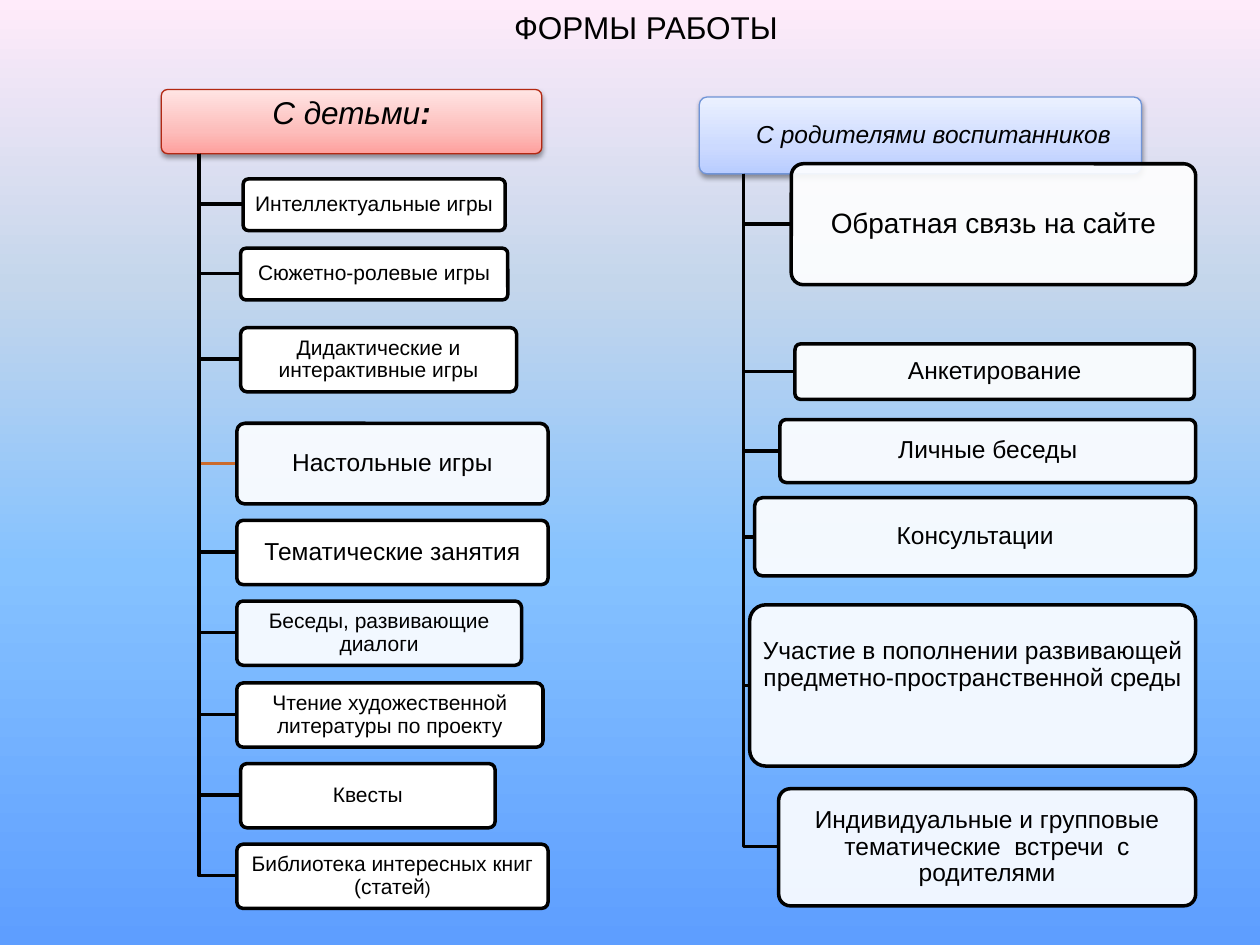
from dataclasses import dataclass, field
from typing import Any

from lxml import etree
from pptx import Presentation
from pptx import util as u
from pptx.dml.color import RGBColor
from pptx.enum import shapes, text
from pptx.oxml.ns import qn

PX = 9144
HUES = {
    "ink": "000000", "paper": "FFFFFF", "accent": "CB6B2C",
    "red": "B32812", "blue": "7094D7",
}
SKY = {0: "5E9EFF", 40: "85C2FF", 70: "C4D6EB", 100: "FFEBFA"}
ROSE = {0: "FEA09D", 35: "FDBDBB", 100: "FFE5E4"}
ICE = {0: "B8CCFF", 35: "CCDAFF", 100: "EBF1FF"}


@dataclass
class Box:
    text: str
    left: int
    top: int
    width: int
    height: int
    size: int = 12
    tail: str = ""
    tip: dict[str, Any] = field(default_factory=dict)
    clear: bool = False
    wire: str = "ink"
    pad: int = 3
    low: int = 2


@dataclass
class Tree:
    head: Box
    tint: dict[int, str]
    edge: str
    trunk: int
    items: list[Box]


KIDS = Tree(
    Box("С детьми", 128, 71, 302, 51, 18, ":", {"bold": True}, low=13),
    ROSE, "red", 158,
    [
        Box("Интеллектуальные игры", 193, 142, 208, 41),
        Box("Сюжетно-ролевые игры", 191, 197, 212, 41),
        Box("Дидактические и интерактивные игры", 191, 260, 219, 51),
        Box("Настольные игры", 188, 336, 247, 64, 14, clear=True, wire="accent"),
        Box("Тематические занятия", 188, 413, 247, 51, 14),
        Box("Беседы, развивающие диалоги", 188, 477, 226, 51, clear=True),
        Box("Чтение художественной литературы по проекту", 188, 542, 243, 51),
        Box("Квесты", 191, 606, 202, 51),
        Box("Библиотека интересных книг (статей", 188, 670, 247, 51,
            tail=")", tip={"size": u.Pt(10)}),
    ],
)
ADULTS = Tree(
    Box("С родителями воспитанников", 555, 77, 351, 61, 14, pad=24),
    ICE, "blue", 590,
    [
        Box("Анкетирование", 631, 273, 317, 44, 14, clear=True),
        Box("Личные беседы", 619, 333, 330, 50, 14, clear=True),
        Box("Консультации", 599, 395, 350, 62, 14, clear=True),
        Box("Обратная связь на сайте", 628, 130, 321, 96, 16, clear=True),
        Box("Участие в пополнении развивающей предметно-пространственной среды",
            595, 480, 354, 128, 14, clear=True, low=34),
        Box("Индивидуальные и групповые тематические  встречи  с родителями",
            618, 626, 331, 93, 14, clear=True),
    ],
)


def put(obj: Any, vals: dict[str, Any]) -> None:
    for key, val in vals.items():
        setattr(obj, key, val)


def rgb(name: str) -> RGBColor:
    return RGBColor.from_string(HUES[name])


def add(top: Any, tag: str, **vals: Any) -> Any:
    return etree.SubElement(top, qn(tag), {k: str(v) for k, v in vals.items()})


def blend(fill: Any, root: Any, stops: dict[int, str]) -> None:
    fill.gradient()
    grad = next(root.iter(qn("a:gradFill")))
    for part in list(grad):
        grad.remove(part)
    band = add(grad, "a:gsLst")
    for pos, tone in stops.items():
        add(add(band, "a:gs", pos=pos * 1000), "a:srgbClr", val=tone)
    add(grad, "a:lin", ang=16200000, scaled=0)


def shade(shape: Any) -> None:
    glow = add(next(shape._element.iter(qn("a:effectLst"))), "a:outerShdw",
               blurRad=u.Pt(3.1), dist=u.Pt(1.6), dir=5400000, rotWithShape=0)
    add(add(glow, "a:srgbClr", val=HUES["ink"]), "a:alpha", val=38000)


def trim(shape: Any, tone: str, width: float) -> None:
    shape.shadow.inherit = False
    shape.line.color.rgb = rgb(tone)
    shape.line.width = u.Pt(width)


def write(para: Any, words: str, style: dict[str, Any]) -> None:
    run = para.add_run()
    run.text = words
    put(run.font, {"name": "Arial", **style})
    run.font.color.rgb = rgb("ink")


def draw(slide: Any, box: Box, tone: str, width: float, slant: bool) -> Any:
    place = (n * PX for n in (box.left, box.top, box.width, box.height))
    shape = slide.shapes.add_shape(shapes.MSO_SHAPE.ROUNDED_RECTANGLE, *place)
    shape.adjustments[0] = 0.1
    trim(shape, tone, width)
    frame = shape.text_frame
    put(frame, {
        "word_wrap": True, "vertical_anchor": text.MSO_ANCHOR.MIDDLE,
        "margin_left": box.pad * PX, "margin_right": 3 * PX,
        "margin_top": 2 * PX, "margin_bottom": box.low * PX,
    })
    para = frame.paragraphs[0]
    put(para, {"alignment": text.PP_ALIGN.CENTER, "line_spacing": 0.9})
    style = {"size": u.Pt(box.size), "italic": slant}
    write(para, box.text, style)
    if box.tail:
        write(para, box.tail, {**style, **box.tip})
    return shape


def link(slide: Any, trunk: int, top: int, box: Box) -> None:
    mid = box.top + box.height // 2
    path = slide.shapes.build_freeform(trunk, top, scale=PX)
    path.add_line_segments([(trunk, mid), (box.left, mid)], close=False)
    wire = path.convert_to_shape()
    wire.fill.background()
    trim(wire, box.wire, 2)


def grow(slide: Any, tree: Tree) -> None:
    head = draw(slide, tree.head, tree.edge, 0.75, True)
    blend(head.fill, head._element, tree.tint)
    shade(head)
    for box in tree.items:
        link(slide, tree.trunk, tree.head.top + tree.head.height, box)
        shape = draw(slide, box, "ink", 2, False)
        shape.fill.solid()
        shape.fill.fore_color.rgb = rgb("paper")
        if box.clear:
            tone = next(shape._element.iter(qn("a:srgbClr")))
            add(tone, "a:alpha", val=90000)


def name(slide: Any) -> None:
    title = slide.shapes.title
    put(title, {"left": 398 * PX, "top": PX, "width": 231 * PX, "height": 40 * PX})
    put(title.text_frame, {
        "word_wrap": False, "vertical_anchor": text.MSO_ANCHOR.TOP,
        "auto_size": text.MSO_AUTO_SIZE.SHAPE_TO_FIT_TEXT,
    })
    para = title.text_frame.paragraphs[0]
    para.alignment = text.PP_ALIGN.LEFT
    write(para, "ФОРМЫ РАБОТЫ", {"size": u.Pt(18)})


def main() -> None:
    deck = Presentation()
    put(deck, {"slide_width": 1000 * PX, "slide_height": 750 * PX})
    slide = deck.slides.add_slide(deck.slide_layouts[5])
    blend(slide.background.fill, slide._element, SKY)
    name(slide)
    for tree in (KIDS, ADULTS):
        grow(slide, tree)
    deck.save("out.pptx")


if __name__ == "__main__":
    main()
